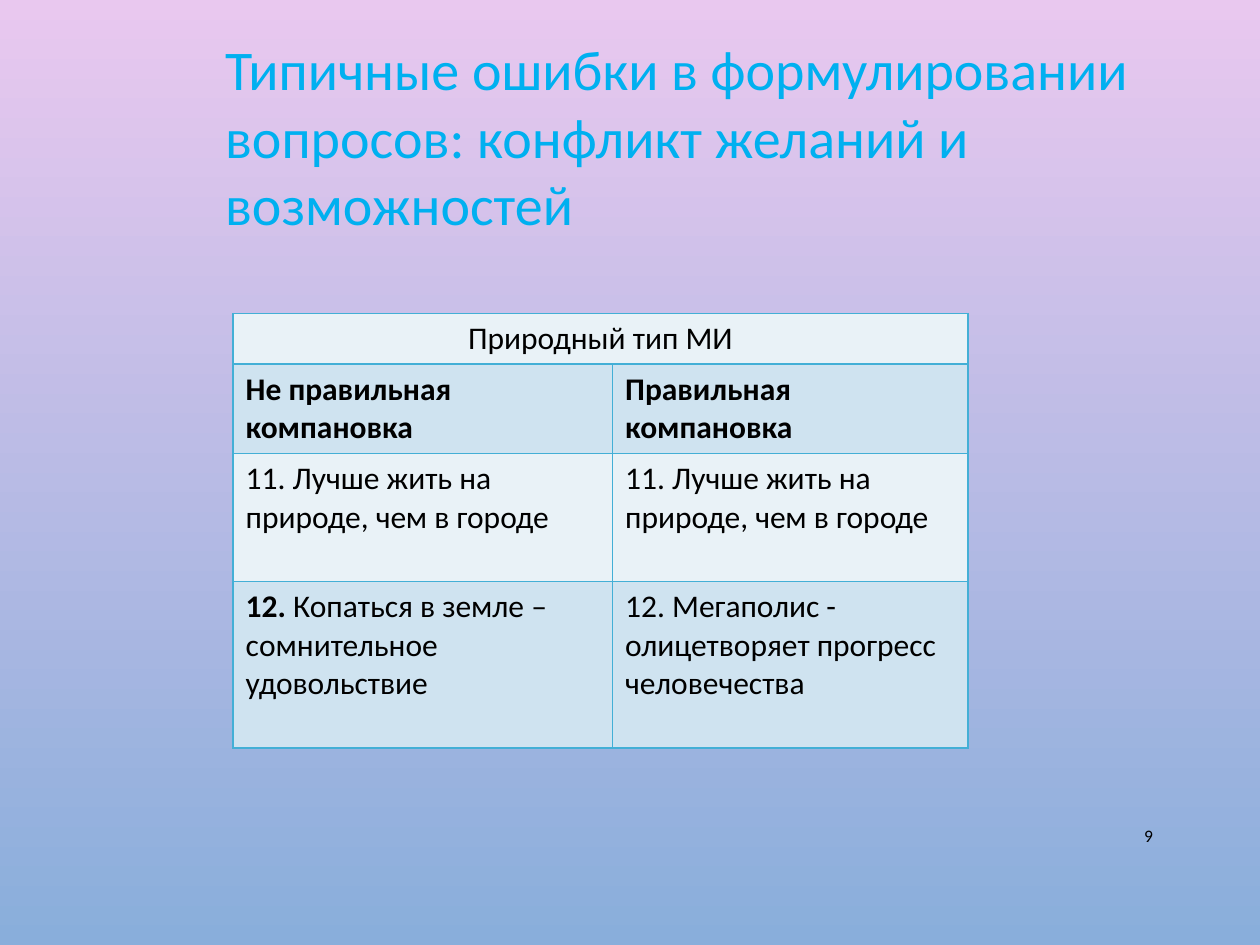
from dataclasses import dataclass

from lxml import etree
from pptx import Presentation
from pptx import util as u
from pptx.dml.color import RGBColor
from pptx.enum import text
from pptx.oxml import ns


@dataclass(frozen=True)
class Theme:
    font: str = "Calibri"
    title_size: int = 32
    table_size: int = 18
    number_size: int = 10
    title: str = "00B0F0"
    ink: str = "000000"
    border: str = "43AFD6"
    bands: tuple = ("E9F2F7", "CFE3F0")
    background: tuple = ("E9C8EF", "89AEDB")


THEME = Theme()

# Content: a cell is a list of (text, bold) runs
TITLE = "Типичные ошибки в формулировании вопросов: конфликт желаний и возможностей"
PAGE_NUMBER = "9"
HEADING = "Природный тип МИ"
ROWS = [
    ([("Не правильная компановка", True)], [("Правильная компановка", True)]),
    ([("11. Лучше жить на природе, чем в городе", False)],
     [("11. Лучше жить на природе, чем в городе", False)]),
    ([("12. ", True), ("Копаться в земле – сомнительное удовольствие", False)],
     [("12. Мегаполис - олицетворяет прогресс человечества", False)]),
]

# Layout in centimetres
TITLE_BOX = (4.29, 0.58, 19.96, 1.96)
NUMBER_BOX = (21.89, 16.33, 1.6, 1.02)
TABLE_ORIGIN = (4.7, 6.32)
COLUMN_WIDTHS = (7.65, 7.16)
ROW_HEIGHTS = (1.02, 1.8, 2.58, 3.36)


def write(paragraph, runs, size, color, align=text.PP_ALIGN.LEFT):
    paragraph.alignment = align
    paragraph.font.name = THEME.font
    paragraph.font.size = u.Pt(size)
    paragraph.font.color.rgb = RGBColor.from_string(color)
    for content, bold in runs:
        run = paragraph.add_run()
        run.text = content
        run.font.bold = bold


def add_text(slide, box, content, size, color, align, anchor):
    shape = slide.shapes.add_textbox(*map(u.Cm, box))
    frame = shape.text_frame
    frame.word_wrap = True
    frame.vertical_anchor = anchor
    write(frame.paragraphs[0], [(content, False)], size, color, align)


def style_cell(cell, fill):
    properties = cell._tc.get_or_add_tcPr()
    for side in ("lnL", "lnR", "lnT", "lnB"):
        line = etree.SubElement(properties, ns.qn(f"a:{side}"), w=str(u.Pt(1)))
        solid = etree.SubElement(line, ns.qn("a:solidFill"))
        etree.SubElement(solid, ns.qn("a:srgbClr"), val=THEME.border)
    cell.fill.solid()
    cell.fill.fore_color.rgb = RGBColor.from_string(fill)


def add_table(slide):
    size = (sum(COLUMN_WIDTHS), sum(ROW_HEIGHTS))
    table = slide.shapes.add_table(
        len(ROW_HEIGHTS), len(COLUMN_WIDTHS), *map(u.Cm, TABLE_ORIGIN + size)).table
    for column, width in zip(table.columns, COLUMN_WIDTHS):
        column.width = u.Cm(width)
    for index, (row, height) in enumerate(zip(table.rows, ROW_HEIGHTS)):
        row.height = u.Cm(height)
        for cell in row.cells:
            style_cell(cell, THEME.bands[index % 2])

    # Heading across both columns
    heading = table.cell(0, 0)
    heading.merge(table.cell(0, 1))
    write(heading.text_frame.paragraphs[0], [(HEADING, False)],
          THEME.table_size, THEME.ink, text.PP_ALIGN.CENTER)

    # Wrong and right wording side by side
    for row_index, row in enumerate(ROWS, start=1):
        for column_index, runs in enumerate(row):
            paragraph = table.cell(row_index, column_index).text_frame.paragraphs[0]
            write(paragraph, runs, THEME.table_size, THEME.ink)


def main():
    presentation = Presentation()
    presentation.slide_width, presentation.slide_height = u.Cm(25.4), u.Cm(19.05)
    slide = presentation.slides.add_slide(presentation.slide_layouts[6])

    # Background, top to bottom
    fill = slide.background.fill
    fill.gradient()
    fill.gradient_angle = 270
    for stop, color in zip(fill.gradient_stops, THEME.background):
        stop.color.rgb = RGBColor.from_string(color)

    add_text(slide, NUMBER_BOX, PAGE_NUMBER, THEME.number_size, THEME.ink,
             text.PP_ALIGN.RIGHT, text.MSO_ANCHOR.MIDDLE)
    add_text(slide, TITLE_BOX, TITLE, THEME.title_size, THEME.title,
             text.PP_ALIGN.LEFT, text.MSO_ANCHOR.TOP)
    add_table(slide)
    presentation.save("out.pptx")


if __name__ == "__main__":
    main()
